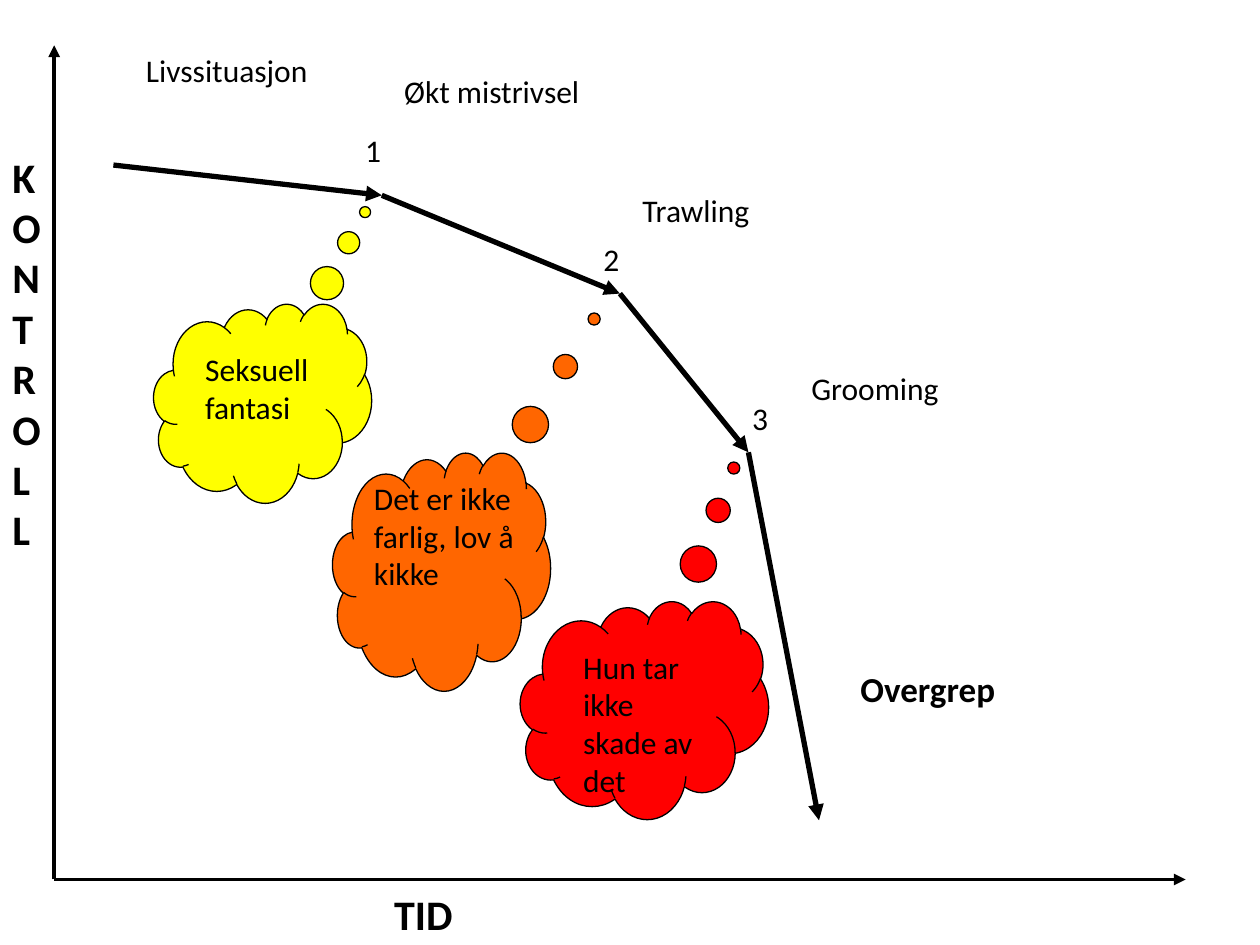
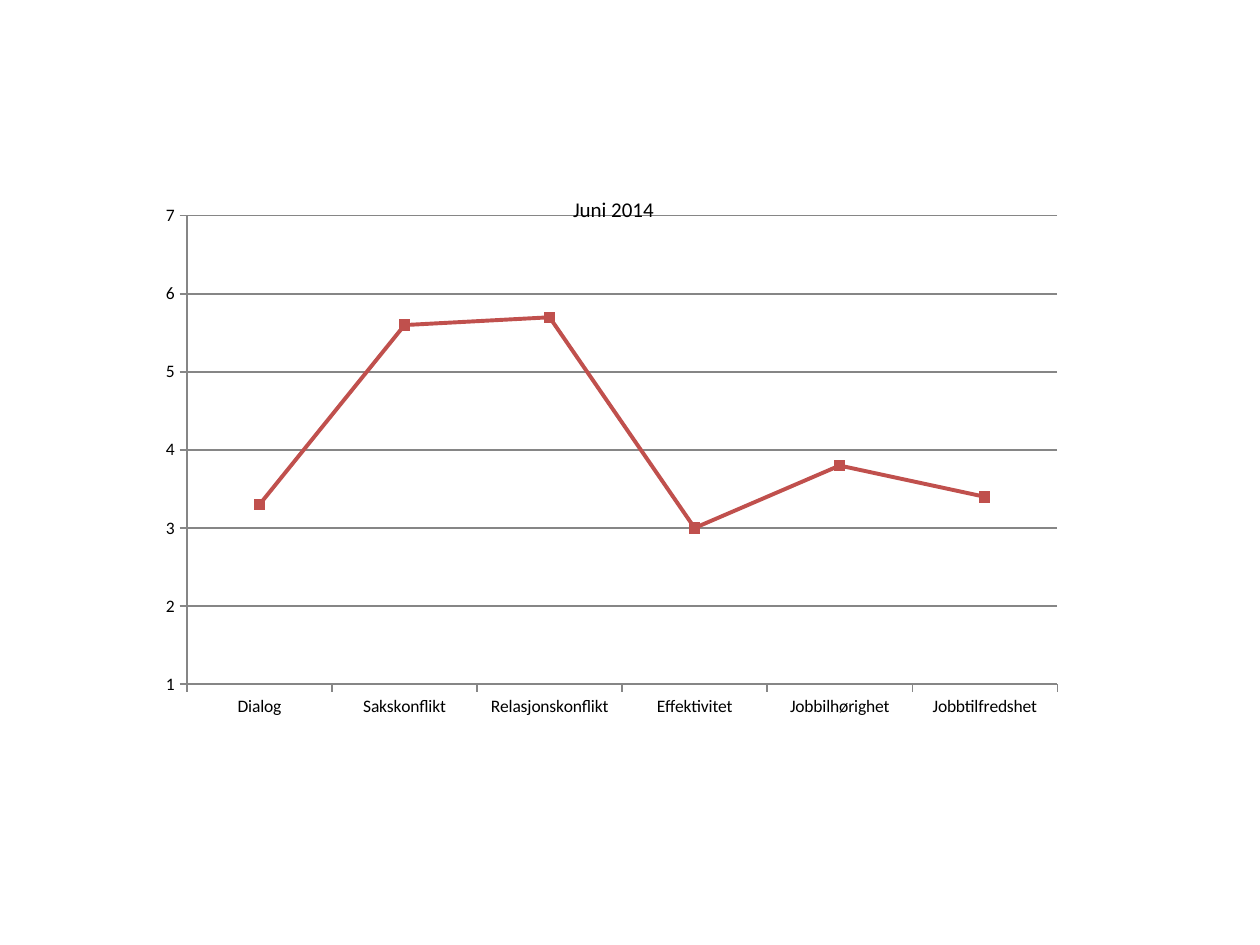
from itertools import pairwise

from lxml import etree
from pptx import Presentation
from pptx import util as u
from pptx.chart import data as chart_data
from pptx.dml.color import RGBColor
from pptx.enum import chart as ch
from pptx.enum import shapes as sh
from pptx.oxml import ns

FONT = "Calibri"
COLORS = {
    "black": "000000",
    "yellow": "FFFF00",
    "orange": "FF6600",
    "red": "FF0000",
    "series": "C0504D",
    "axis": "868686",
}


def rgb(name):
    return RGBColor.from_string(COLORS[name])


def set_font(font, size, bold=False):
    font.name, font.size, font.bold = FONT, u.Pt(size), bold
    font.color.rgb = rgb("black")


def set_line(line, color, width):
    line.color.rgb = rgb(color)
    line.width = u.Pt(width)


def add_page(deck):
    return deck.slides.add_slide(deck.slide_layouts[6])


def add_arrow(page, start, end, width):
    points = [u.Inches(value) for value in (*start, *end)]
    arrow = page.shapes.add_connector(sh.MSO_CONNECTOR.STRAIGHT, *points)
    set_line(arrow.line, "black", width)
    outline = arrow.line._get_or_add_ln()
    etree.SubElement(outline, ns.qn("a:tailEnd"), type="triangle")
    etree.SubElement(arrow._element.spPr, ns.qn("a:effectLst"))


def add_label(page, words, left, top, width, height, size=18, bold=False):
    box = page.shapes.add_textbox(*map(u.Inches, (left, top, width, height)))
    box.text_frame.word_wrap = True
    box.text_frame.text = words
    set_font(box.text_frame.paragraphs[0].runs[0].font, size, bold)


def add_thought(page, color, area, pointer):
    cloud = page.shapes.add_shape(
        sh.MSO_SHAPE.CLOUD_CALLOUT, *map(u.Inches, area))
    cloud.shadow.inherit = False
    cloud.fill.solid()
    cloud.fill.fore_color.rgb = rgb(color)
    set_line(cloud.line, "black", 0.75)
    for index, value in enumerate(pointer):
        cloud.adjustments[index] = value


def set_layout(parent, position, **places):
    """Fix the place of a chart part as fractions of the chart."""
    for old in parent.findall(ns.qn("c:layout")):
        parent.remove(old)
    layout = etree.Element(ns.qn("c:layout"))
    manual = etree.SubElement(layout, ns.qn("c:manualLayout"))
    for tag, value in places.items():
        etree.SubElement(manual, ns.qn(f"c:{tag}"), val=str(value))
    parent.insert(position, layout)


def style_axis(axis):
    axis.major_tick_mark = ch.XL_TICK_MARK.OUTSIDE
    axis.minor_tick_mark = ch.XL_TICK_MARK.NONE
    set_font(axis.tick_labels.font, 10)
    set_line(axis.format.line, "axis", 0.75)


def add_line_chart(page, title, scores, area):
    table = chart_data.CategoryChartData()
    table.categories = list(scores)
    table.add_series(title, list(scores.values()))
    chart = page.shapes.add_chart(
        ch.XL_CHART_TYPE.LINE_MARKERS, *map(u.Inches, area), table).chart
    chart.has_legend = False
    set_font(chart.font, 10)

    # Title over the plot
    chart.has_title = True
    frame = chart.chart_title.text_frame
    frame.text = title
    set_font(frame.paragraphs[0].runs[0].font, 12)
    chart.chart_title.include_in_layout = True
    set_layout(chart.chart_title._element, 1,
               xMode="edge", yMode="edge", x=0.45, y=0.04)
    set_layout(chart._chartSpace.chart.plotArea, 0,
               layoutTarget="inner", xMode="edge", yMode="edge",
               x=0.031, y=0.082, w=0.954, h=0.817)

    # Axes
    style_axis(chart.category_axis)
    values = chart.value_axis
    style_axis(values)
    values.minimum_scale, values.maximum_scale, values.major_unit = 1, 7, 1
    values.tick_labels.number_format = "0"
    values.tick_labels.number_format_is_linked = False
    values.has_major_gridlines = True
    set_line(values.major_gridlines.format.line, "axis", 0.75)

    # Series
    plot = chart.plots[0]
    plot.vary_by_categories = False
    series = plot.series[0]
    series.smooth = False
    set_line(series.format.line, "series", 2.25)
    marker = series.marker
    marker.style, marker.size = ch.XL_MARKER_STYLE.SQUARE, 6
    marker.format.fill.solid()
    marker.format.fill.fore_color.rgb = rgb("series")
    set_line(marker.format.line, "series", 0.75)


def build_control_page(deck):
    page = add_page(deck)

    # Falling curve of control
    curve = [(0.9, 1.31), (3.03, 1.55), (4.92, 2.33), (5.94, 3.59), (6.5, 6.51)]
    for start, end in pairwise(curve):
        add_arrow(page, start, end, 3)

    # Axes and their names
    origin = (0.43, 6.98)
    for tip in ((0.43, 0.36), (9.41, 6.98)):
        add_arrow(page, origin, tip, 2.25)
    add_label(page, "TID", 3.03, 7, 4.33, 0.5, 24, True)
    add_label(page, "KONTROLL", 0, 1.15, 0.43, 3.34, 24, True)

    # Thought clouds
    add_thought(page, "yellow", (1.22, 2.41, 1.73, 1.58), (0.47, -0.96))
    add_thought(page, "orange", (2.64, 3.59, 1.73, 1.89), (0.7, -1.06))
    add_thought(page, "red", (4.13, 4.77, 1.97, 1.73), (0.36, -1.11))

    # Turning points, stages and thoughts
    for label in (
        ("1", 2.8, 0.99, 0.39, 0.4),
        ("2", 4.69, 1.86, 0.63, 0.4),
        ("3", 5.87, 3.12, 0.55, 0.4),
        ("Livssituasjon", 1.06, 0.36, 2.13, 0.4),
        ("Økt mistrivsel", 3.11, 0.52, 2.05, 0.41),
        ("Trawling", 5, 1.47, 1.97, 0.41),
        ("Grooming", 6.34, 2.88, 2.28, 0.41),
        ("Overgrep", 6.73, 5.25, 2.91, 0.44, 20, True),
        ("Seksuell fantasi", 1.53, 2.73, 1.42, 0.71),
        ("Det er ikke farlig, lov å kikke", 2.87, 3.75, 1.34, 1.01),
        ("Hun tar ikke skade av det", 4.53, 5.09, 1.18, 1.3),
    ):
        add_label(page, *label)


def build_survey_page(deck):
    scores = {
        "Dialog": 3.3,
        "Sakskonflikt": 5.6,
        "Relasjonskonflikt": 5.7,
        "Effektivitet": 3,
        "Jobbilhørighet": 3.8,
        "Jobbtilfredshet": 3.4,
    }
    add_line_chart(add_page(deck), "Juni 2014", scores,
                   (1.26, 1.34, 7.24, 4.55))


def main():
    deck = Presentation()
    deck.slide_width, deck.slide_height = u.Inches(10), u.Inches(7.5)
    build_control_page(deck)
    build_survey_page(deck)
    deck.save("out.pptx")


if __name__ == "__main__":
    main()
